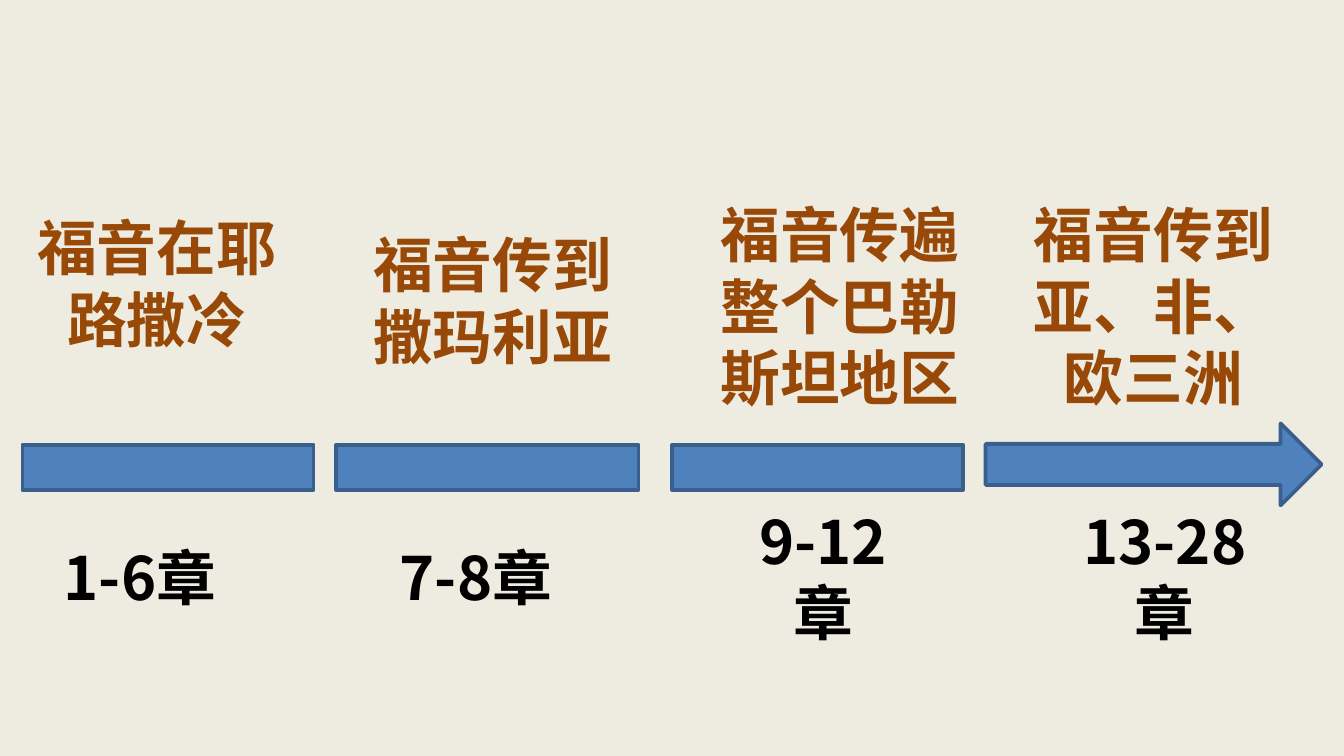
"""Build a four-stage timeline slide of the chapters that tell how the gospel spread."""
from pptx import Presentation
from pptx.dml.color import RGBColor
from pptx.enum.shapes import MSO_SHAPE
from pptx.enum.text import MSO_ANCHOR, PP_ALIGN
from pptx.util import Inches, Pt

THEME = {
    "background": RGBColor.from_string("EEECE1"),
    "bar": RGBColor.from_string("4F81BD"),
    "outline": RGBColor.from_string("3A5F8C"),
    "heading": RGBColor.from_string("984807"),
    "chapter": RGBColor.from_string("000000"),
    "font": "Noto Sans CJK SC",
    "size": Pt(32),
    "leading": Pt(38.5),
    "line": Pt(2),
}

presentation = Presentation()
presentation.slide_width = Inches(10)
presentation.slide_height = presentation.slide_width * 9 // 16
COLUMN = presentation.slide_width / 120
ROW = presentation.slide_height / 100


def grid(left, top, width, height):
    return [round(left * COLUMN), round(top * ROW), round(width * COLUMN), round(height * ROW)]


def add_label(slide, text, box, color):
    frame = slide.shapes.add_textbox(*box).text_frame
    paragraph = frame.paragraphs[0]
    run = paragraph.add_run()
    formats = (
        (frame, {"word_wrap": True, "vertical_anchor": MSO_ANCHOR.MIDDLE}),
        (paragraph, {"alignment": PP_ALIGN.CENTER, "line_spacing": THEME["leading"]}),
        (run, {"text": text}),
        (run.font, {"name": THEME["font"], "size": THEME["size"], "bold": True}),
        (run.font.color, {"rgb": color}),
    )
    for target, values in formats:
        for name, value in values.items():
            setattr(target, name, value)
    east_asian = run.font._element.makeelement(
        "{http://schemas.openxmlformats.org/drawingml/2006/main}ea", {"typeface": THEME["font"]})
    run.font._element.find("{*}latin").addnext(east_asian)


slide = presentation.slides.add_slide(presentation.slide_layouts[6])
slide.background.fill.solid()
slide.background.fill.fore_color.rgb = THEME["background"]

PROCESS, ARROW = MSO_SHAPE.FLOWCHART_PROCESS, MSO_SHAPE.LEFT_ARROW
BAR_ROWS, ARROW_ROWS = (58.85, 5.93), (56, 10.85)
stages = [
    ("福音在耶路撒冷", (2, 24.9, 24, 24.9), "1-6章", (3, 19), PROCESS, (2, 26), BAR_ROWS, 0),
    ("福音传到撒玛利亚", (31, 29.3, 26, 20.7), "7-8章", (33, 19), PROCESS, (30, 27), BAR_ROWS, 0),
    ("福音传遍整个巴勒斯坦地区", (61, 30.75, 28, 19.25), "9-12章", (64, 19), PROCESS, (60, 26), BAR_ROWS, 0),
    ("福音传到亚、非、欧三洲", (89, 30.75, 28, 19.25), "13-28章", (93, 22), ARROW, (88, 30), ARROW_ROWS, 180),
]

for heading, heading_box, chapters, chapter_columns, kind, columns, rows, rotation in stages:
    bar = slide.shapes.add_shape(kind, *grid(columns[0], rows[0], columns[1], rows[1]))
    bar.fill.solid()
    formats = (
        (bar, {"rotation": rotation}),
        (bar.shadow, {"inherit": False}),
        (bar.fill.fore_color, {"rgb": THEME["bar"]}),
        (bar.line, {"width": THEME["line"]}),
        (bar.line.color, {"rgb": THEME["outline"]}),
    )
    for target, values in formats:
        for name, value in values.items():
            setattr(target, name, value)
    add_label(slide, heading, grid(*heading_box), THEME["heading"])
    add_label(slide, chapters, grid(chapter_columns[0], 69.35, chapter_columns[1], 13.7), THEME["chapter"])

presentation.save("out.pptx")
